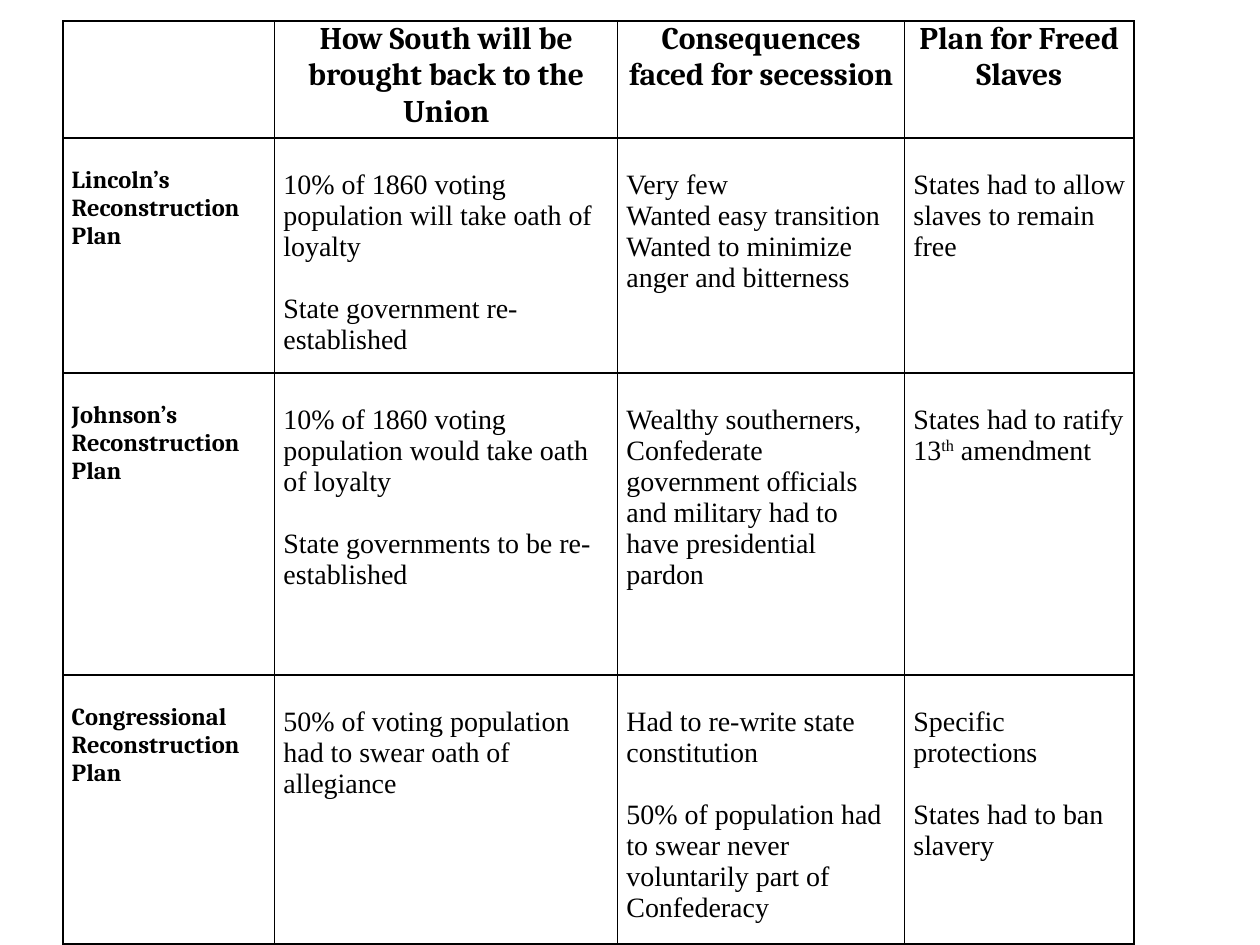
import pptx
import pptx.dml.color
import pptx.enum.text
import pptx.oxml
import pptx.oxml.ns
import pptx.util

Pt = pptx.util.Pt
BLACK = pptx.dml.color.RGBColor(0, 0, 0)
HEADING_FONT, BODY_FONT = "Cambria", "Times New Roman"
COLUMN_WIDTHS = (121, 196, 164, 131)
ROW_HEIGHTS = (67, 134.3, 172.6, 153.7)
BODY_LINE, LABEL_LINE = 17.7, 16

HEADINGS = (
    "How South will be brought back to the Union",
    "Consequences faced for secession",
    "Plan for Freed Slaves",
)
# Each cell is a list of groups, each group a list of paragraphs.
PLANS = (
    ("Lincoln’s", (
        [["10% of 1860 voting population will take oath of loyalty"],
         ["State government re-established"]],
        [["Very few", "Wanted easy transition",
          "Wanted to minimize anger and bitterness"]],
        [["States had to allow slaves to remain free"]],
    )),
    ("Johnson’s", (
        [["10% of 1860 voting population would take oath of loyalty"],
         ["State governments to be re-established"]],
        [["Wealthy southerners, Confederate government officials "
          "and military had to have presidential pardon"]],
        [[("States had to ratify 13", "th", " amendment")]],
    )),
    ("Congressional", (
        [["50% of voting population had to swear oath of allegiance"]],
        [["Had to re-write state constitution"],
         ["50% of population had to swear never voluntarily part of Confederacy"]],
        [["Specific protections"], ["States had to ban slavery"]],
    )),
)


def add_span(para, text, font, size, bold, raised=False):
    """Add one formatted run, raised when it is an ordinal ending."""
    span = para.add_run()
    span.text = text
    span.font.name, span.font.size, span.font.bold = font, Pt(size), bold
    span.font.color.rgb = BLACK
    if raised:
        span._r.get_or_add_rPr().set("baseline", "30000")


def style_cell(cell):
    """Give a cell black borders, narrow margins and no fill."""
    properties = cell._tc.get_or_add_tcPr()
    for side in ("lnL", "lnR", "lnT", "lnB"):
        properties.append(pptx.oxml.parse_xml(
            f'<a:{side} {pptx.oxml.ns.nsdecls("a")} w="{Pt(1)}"><a:solidFill>'
            f'<a:srgbClr val="{BLACK}"/></a:solidFill></a:{side}>'))
    cell.fill.background()
    cell.margin_left = cell.margin_right = Pt(5)
    cell.margin_top = cell.margin_bottom = Pt(0)


def write_cell(cell, groups, font, size, bold, top=0, centred=False):
    """Write groups of paragraphs, with a line of space between groups."""
    cell.margin_top = Pt(top)
    frame = cell.text_frame
    para = None
    for group in groups:
        for position, text in enumerate(group):
            first = para is None
            para = frame.paragraphs[0] if first else frame.add_paragraph()
            if position == 0 and not first:
                para.space_before = Pt(BODY_LINE)
            if centred:
                para.alignment = pptx.enum.text.PP_ALIGN.CENTER
            pieces = (text,) if isinstance(text, str) else text
            for index, piece in enumerate(pieces):
                add_span(para, piece, font, size, bold, raised=index == 1)


def add_grid(page):
    """Add the empty bordered table and return it."""
    table = page.shapes.add_table(
        len(ROW_HEIGHTS), len(COLUMN_WIDTHS), Pt(36), Pt(12),
        Pt(sum(COLUMN_WIDTHS)), Pt(sum(ROW_HEIGHTS))).table
    table.first_row = table.horz_banding = False
    for column, width in zip(table.columns, COLUMN_WIDTHS):
        column.width = Pt(width)
    for row, height in zip(table.rows, ROW_HEIGHTS):
        row.height = Pt(height)
    for cell in table.iter_cells():
        style_cell(cell)
    return table


def main():
    """Build the comparison of Reconstruction plans."""
    deck = pptx.Presentation()
    deck.slide_width, deck.slide_height = Pt(720), Pt(540)
    page = deck.slides.add_slide(deck.slide_layouts[6])
    table = add_grid(page)
    for column, heading in enumerate(HEADINGS, 1):
        write_cell(table.cell(0, column), [[heading]], HEADING_FONT, 18, True,
                   centred=True)
    for row, (author, answers) in enumerate(PLANS, 1):
        label = [[f"{author} Reconstruction", "Plan"]]
        write_cell(table.cell(row, 0), label, HEADING_FONT, 14, True, LABEL_LINE)
        for column, groups in enumerate(answers, 1):
            write_cell(table.cell(row, column), groups, BODY_FONT, 16, False,
                       BODY_LINE)
    deck.save("out.pptx")


if __name__ == "__main__":
    main()
